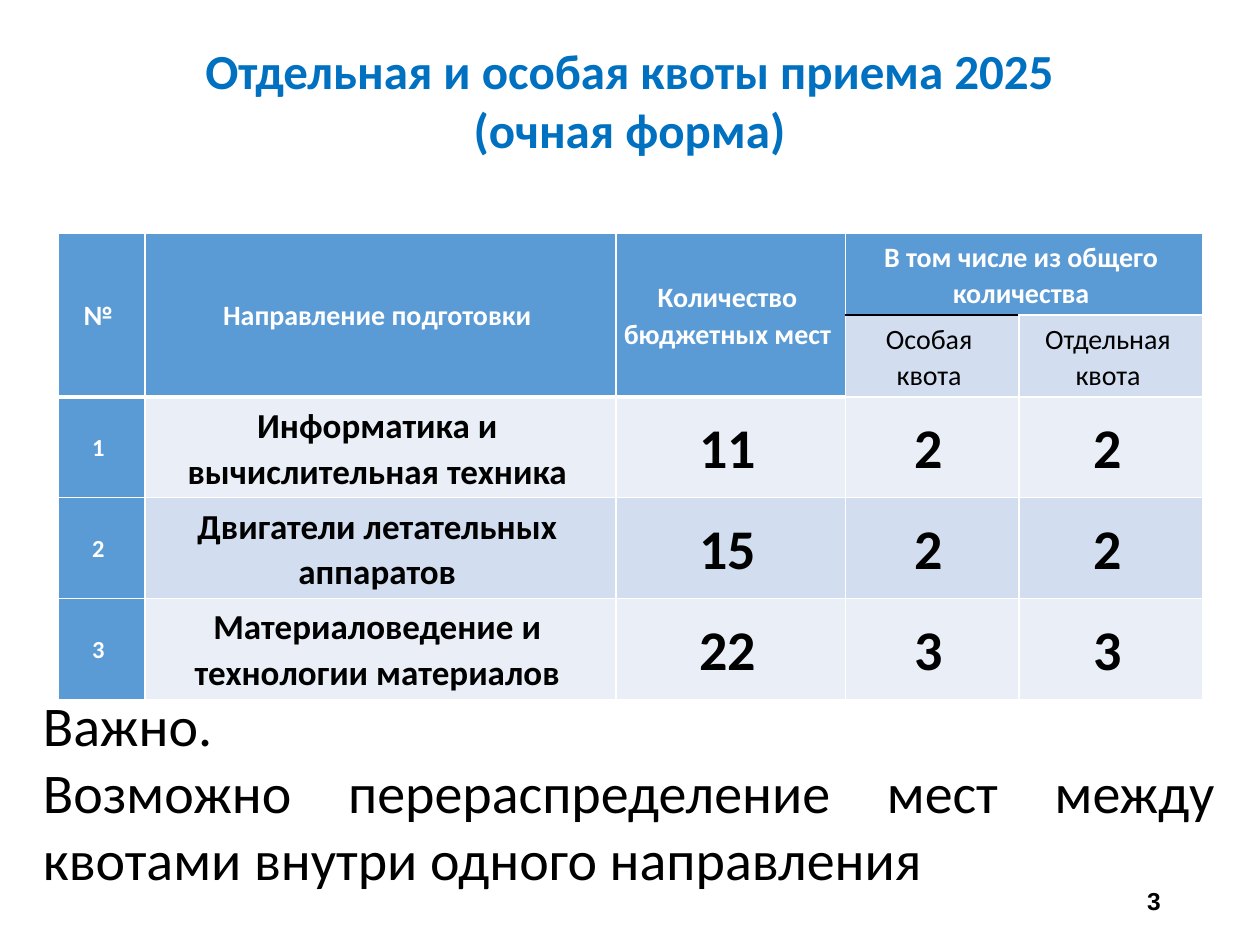
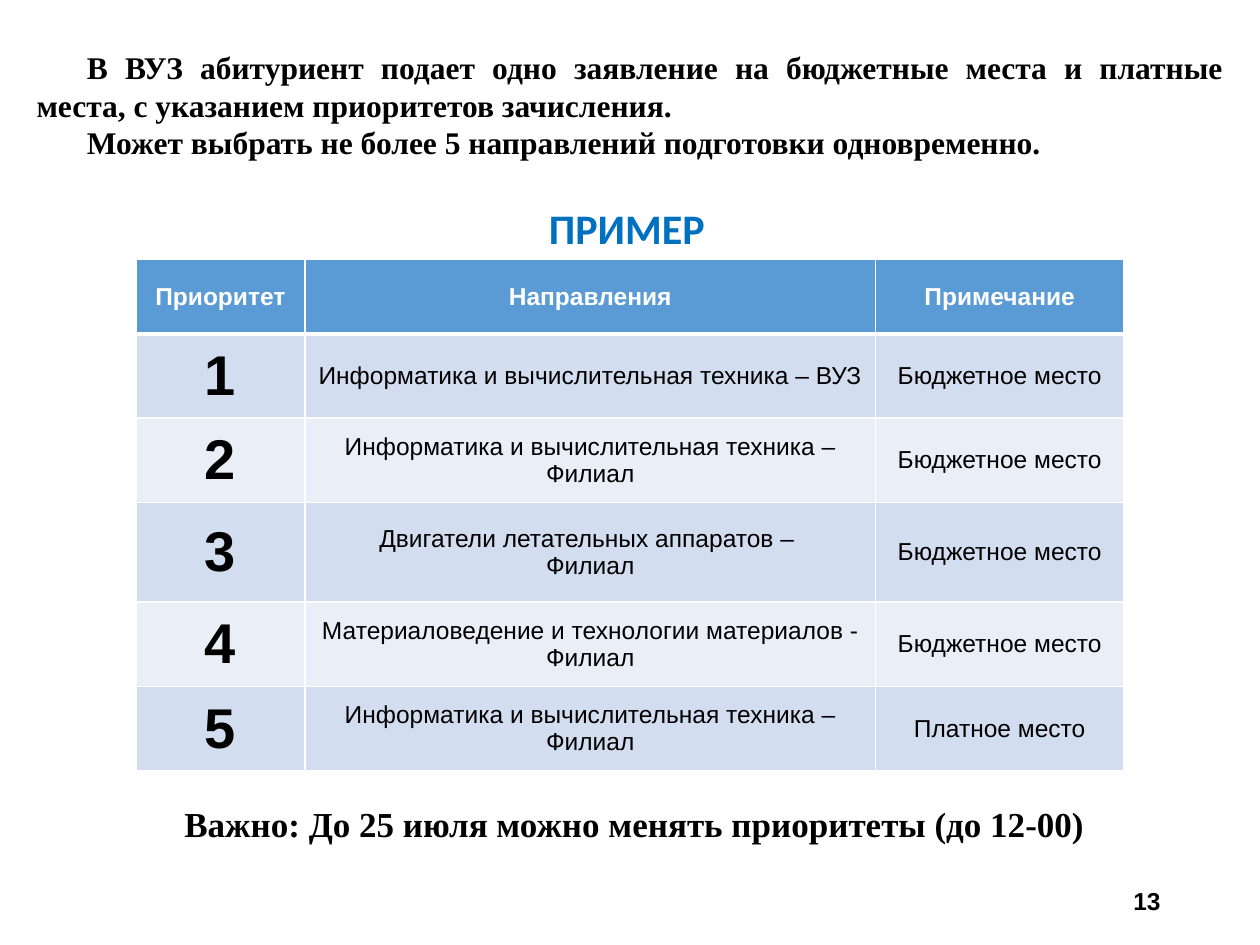
from lxml import etree
from pptx import Presentation, util as u
from pptx.dml.color import RGBColor
from pptx.enum import text
from pptx.oxml.ns import qn

COLOURS = {
    "title": "0070C0", "header": "5B9BD5", "band_dark": "D2DEEF",
    "band_light": "EAEFF7", "ink": "000000", "paper": "FFFFFF",
}
COLUMNS, ROWS = 100, 75
LEFT, CENTRE = text.PP_ALIGN.LEFT, text.PP_ALIGN.CENTER
RIGHT, JUSTIFY = text.PP_ALIGN.RIGHT, text.PP_ALIGN.JUSTIFY
TOP, MIDDLE = text.MSO_ANCHOR.TOP, text.MSO_ANCHOR.MIDDLE
THIN, THICK = 1, 3


def write(frame, words, font="Calibri", size=14, colour="ink", bold=False,
          align=CENTRE, anchor=TOP, spacing=1.0, indent=0):
    """Fill a text frame; each line of words becomes a paragraph."""
    frame.word_wrap = True
    frame.vertical_anchor = anchor
    aligns = align if isinstance(align, list) else [align]
    for index, line in enumerate(words.split("\n")):
        para = frame.add_paragraph() if index else frame.paragraphs[0]
        para.alignment = aligns[min(index, len(aligns) - 1)]
        para.line_spacing = spacing
        para.space_before = u.Pt(0)
        properties = para._p.get_or_add_pPr()
        properties.set("marL", "0")
        properties.set("indent", str(u.Inches(indent)))
        etree.SubElement(properties, qn("a:buNone"))
        span = para.add_run()
        span.text = line
        span.font.name, span.font.size, span.font.bold = font, u.Pt(size), bold
        span.font.color.rgb = RGBColor.from_string(COLOURS[colour])


def draw_borders(cell, edges):
    """Line all four sides; edges maps a side to (colour, points)."""
    properties = cell._tc.get_or_add_tcPr()
    for side in "LRTB":
        colour, points = edges.get(side, ("paper", THIN))
        line = etree.SubElement(properties, qn(f"a:ln{side}"), w=str(u.Pt(points)))
        fill = etree.SubElement(line, qn("a:solidFill"))
        etree.SubElement(fill, qn("a:srgbClr"), val=COLOURS[colour])


class Deck:
    def __init__(self):
        self.file = Presentation()
        self.file.slide_width, self.file.slide_height = u.Inches(10), u.Inches(7.5)
        self.page = None

    def across(self, columns):
        return round(self.file.slide_width * columns / COLUMNS)

    def down(self, rows):
        return round(self.file.slide_height * rows / ROWS)

    def area(self, left, top, width, height):
        return self.across(left), self.down(top), self.across(width), self.down(height)

    def new_page(self, number):
        self.page = self.file.slides.add_slide(self.file.slide_layouts[1])
        self.box(str(number), (70.6, 69.5, 22.5, 4), font="Arial", bold=True,
                 align=RIGHT, anchor=MIDDLE)

    def fill_placeholder(self, holder, words, place, **style):
        holder.left, holder.top, holder.width, holder.height = self.area(*place)
        holder.text_frame.auto_size = text.MSO_AUTO_SIZE.NONE
        write(holder.text_frame, words, **style)

    def title(self, words, place, size):
        self.fill_placeholder(self.page.shapes.title, words, place, size=size,
                              colour="title", bold=True)

    def body(self, words, place, **style):
        self.fill_placeholder(self.page.placeholders[1], words, place, **style)

    def box(self, words, place, **style):
        box = self.page.shapes.add_textbox(*self.area(*place))
        write(box.text_frame, words, **style)

    def table(self, corner, widths, heights, content, look, edges, merges=(), margins=None):
        """look(row, column) gives (fill, text style); edges gives the borders."""
        place = self.area(*corner, sum(widths), sum(heights))
        grid = self.page.shapes.add_table(len(heights), len(widths), *place).table
        for column, width in zip(grid.columns, widths):
            column.width = self.across(width)
        for row, height in zip(grid.rows, heights):
            row.height = self.down(height)
        for first, last in merges:
            grid.cell(*first).merge(grid.cell(*last))
        for r, line in enumerate(content):
            for c, words in enumerate(line):
                cell = grid.cell(r, c)
                fill, style = look(r, c)
                draw_borders(cell, edges(r, c))
                cell.fill.solid()
                cell.fill.fore_color.rgb = RGBColor.from_string(COLOURS[fill])
                cell.vertical_anchor = MIDDLE
                if margins:
                    (cell.margin_left, cell.margin_top,
                     cell.margin_right, cell.margin_bottom) = map(u.Inches, margins)
                if words:
                    write(cell.text_frame, words, anchor=MIDDLE, **style)


# Quota table: two header rows, numbered first column
def quota_look(row, column):
    style = dict(spacing=1.07, bold=True)
    if row == 1 and column > 2:
        return "band_dark", dict(style, size=16, bold=False)
    if row < 2:
        return "header", dict(style, size=16, colour="paper")
    if column == 0:
        return "header", dict(style, size=14, colour="paper")
    band = "band_dark" if row % 2 else "band_light"
    return band, dict(style, size=20 if column == 1 else 32)


def quota_edges(row, column):
    if column < 3:
        return {0: {"B": ("paper", THICK)}, 1: {"B": ("paper", THICK)},
                2: {"T": ("paper", THICK)}}.get(row, {})
    if column == 3 and row < 2:
        return {"BT"[row]: ("ink", THIN)}
    return {}


# Priority table: one header row, large numbers on the left
def priority_look(row, column):
    style = dict(font="Arial", size=14)
    if row == 0:
        return "header", dict(style, colour="paper", bold=True)
    if column == 0:
        style.update(size=32, bold=True)
    return "band_dark" if row % 2 else "band_light", style


def priority_edges(row, column):
    return {"BT"[row]: ("paper", THICK)} if row < 2 else {}


def quotas_page(deck):
    deck.new_page(3)
    deck.title("Отдельная и особая квоты приема 2025\n(очная форма)",
               (14.9, 2.7, 70.1, 10.4), size=28)
    deck.table(
        (4.6, 18.5), [6.9, 37.4, 18.2, 13.8, 14.6], [6.5, 6.5, 8, 8, 8],
        [["№", "Направление подготовки", "Количество бюджетных мест",
          "В том числе из общего количества", ""],
         ["", "", "", "Особая квота", "Отдельная квота"],
         ["1", "Информатика и вычислительная техника", "11", "2", "2"],
         ["2", "Двигатели летательных аппаратов", "15", "2", "2"],
         ["3", "Материаловедение и технологии материалов", "22", "3", "3"]],
        quota_look, quota_edges,
        merges=[((0, c), (1, c)) for c in range(3)] + [((0, 3), (0, 4))],
        margins=(0.05, 0.04, 0.1, 0.04))
    deck.body("Важно.\nВозможно перераспределение мест между квотами "
              "внутри одного направления",
              (2.4, 54.3, 95.1, 17.2), size=32, align=[LEFT, JUSTIFY])


def priorities_page(deck):
    serif = dict(font="Times New Roman", bold=True, indent=0.4)
    budget = "Бюджетное место"
    computing = "Информатика и вычислительная техника – "
    deck.new_page(13)
    deck.body("В ВУЗ абитуриент подает одно заявление на бюджетные места и платные "
              "места, с указанием приоритетов зачисления.\n"
              "Может выбрать не более 5 направлений подготовки одновременно.",
              (1.9, 3.3, 96.2, 10.1), size=18, align=JUSTIFY, **serif)
    deck.title("ПРИМЕР", (6.8, 15.6, 85.9, 5), size=24)
    choices = [
        (computing + "ВУЗ", budget),
        (computing + "Филиал", budget),
        ("Двигатели летательных аппаратов – \nФилиал", budget),
        ("Материаловедение и технологии материалов - Филиал", budget),
        (computing + "Филиал", "Платное место"),
    ]
    deck.table(
        (10.8, 20.6), [13.4, 45.3, 19.7], [5.9, 6.7, 6.7, 7.9, 6.7, 6.7],
        [["Приоритет", "Направления", "Примечание"]]
        + [[str(rank), *choice] for rank, choice in enumerate(choices, 1)],
        priority_look, priority_edges)
    deck.box("Важно: До 25 июля можно менять приоритеты (до 12-00)",
             (8.8, 63.2, 79.1, 4.4), size=20, **serif)


def main():
    deck = Deck()
    quotas_page(deck)
    priorities_page(deck)
    deck.file.save("out.pptx")


if __name__ == "__main__":
    main()
